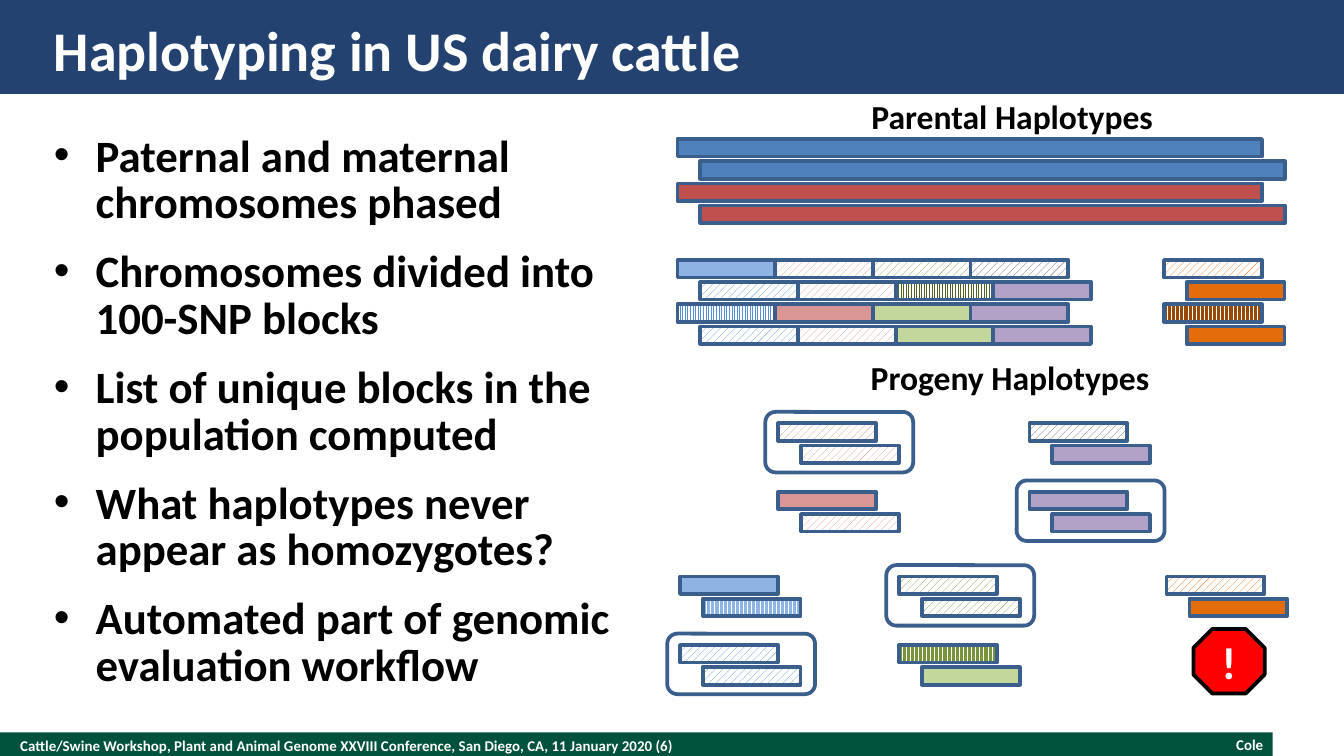
"""Build the slide on haplotyping in US dairy cattle."""
import lxml.etree
import pptx
import pptx.dml.color
import pptx.enum.dml
import pptx.enum.shapes
import pptx.enum.text
import pptx.oxml.ns
import pptx.util

THEME = {
    "font": "Calibri", "title": 30, "body": 24, "label": 18, "footer": 8,
    "line": 2, "white": "FFFFFF", "black": "000000",
    "header": "244270", "band": "00523C", "outline": "3A5F8C",
    "sire": "4F81BD", "dam": "C0504D", "alarm": "FF0000",
    "sky": "8EB4E3", "rose": "D99694", "lime": "C3D69B",
    "lilac": "B3A2C7", "orange": "E46C0A",
    "blue hatch": ("WIDE_UPWARD_DIAGONAL", "558ED5"),
    "rose hatch": ("WIDE_UPWARD_DIAGONAL", "D99694"),
    "green hatch": ("WIDE_UPWARD_DIAGONAL", "77933C"),
    "violet hatch": ("WIDE_UPWARD_DIAGONAL", "604A7B"),
    "orange hatch": ("WIDE_UPWARD_DIAGONAL", "E46C0A"),
    "blue stripe": ("LIGHT_VERTICAL", "558ED5"),
    "forest stripe": ("LIGHT_VERTICAL", "4F6228"),
    "sky stripe": ("DARK_VERTICAL", "8EB4E3"),
    "green stripe": ("DARK_VERTICAL", "77933C"),
    "brown stripe": ("DARK_VERTICAL", "984807"),
}
COLOR = pptx.dml.color.RGBColor.from_string
KIND = pptx.enum.shapes.MSO_SHAPE
ALIGN = pptx.enum.text.PP_ALIGN
MIDDLE = pptx.enum.text.MSO_ANCHOR.MIDDLE
FIT = pptx.enum.text.MSO_AUTO_SIZE

deck = pptx.Presentation()
deck.slide_width = pptx.util.Inches(10)
deck.slide_height = deck.slide_width * 9 // 16
page = deck.slides.add_slide(deck.slide_layouts[1])
CELL = deck.slide_width / 100


def add_box(parent, kind, cells, fill=None, line="outline"):
    """Draw a shape whose place is given in grid cells."""
    box = parent.shapes.add_shape(kind, *[round(cell * CELL) for cell in cells])
    box.shadow.inherit = False
    if fill is None:
        box.fill.background()
    elif isinstance(THEME[fill], tuple):
        pattern, ink = THEME[fill]
        box.fill.patterned()
        box.fill.pattern = getattr(pptx.enum.dml.MSO_PATTERN, pattern)
        box.fill.fore_color.rgb = COLOR(ink)
        box.fill.back_color.rgb = COLOR(THEME["white"])
    else:
        box.fill.solid()
        box.fill.fore_color.rgb = COLOR(THEME[fill])
    if line is None:
        box.line.fill.background()
    else:
        box.line.color.rgb = COLOR(THEME[line])
        box.line.width = pptx.util.Pt(THEME["line"])
    return box


def write(box, text, size, color, align=ALIGN.LEFT, flush=True):
    """Fill a box with text and format every run."""
    frame = box.text_frame
    frame.text = text
    if flush:
        frame.margin_left = frame.margin_right = 0
        frame.margin_top = frame.margin_bottom = 0
    for para in frame.paragraphs:
        para.alignment = align
        for span in para.runs:
            span.font.name = THEME["font"]
            span.font.size = pptx.util.Pt(THEME[size])
            span.font.bold = True
            span.font.color.rgb = COLOR(THEME[color])
    return frame


add_box(page, KIND.RECTANGLE, (0, 54.5, 94.7, 2), "band", None)
add_box(page, KIND.RECTANGLE, (0, 0, 100, 7), "header", None)

for text, cells, align in (
    ("Cattle/Swine Workshop, Plant and Animal Genome XXVIII Conference, "
     "San Diego, CA, 11 January 2020 (6)", (1.5, 54.5, 65, 2), ALIGN.LEFT),
    ("Cole", (72, 54.75, 22, 1.3), ALIGN.RIGHT),
):
    box = page.shapes.add_textbox(*[round(cell * CELL) for cell in cells])
    frame = write(box, text, "footer", "white", align)
    frame.word_wrap = True
    frame.vertical_anchor = MIDDLE

title, body = page.shapes.title, page.placeholders[1]
for holder, cells in ((title, (4, 1, 92, 5.25)), (body, (4, 10, 44, 42))):
    holder.left, holder.top, holder.width, holder.height = [
        round(cell * CELL) for cell in cells]
    holder.text_frame.auto_size = FIT.NONE
    holder.element.getparent().append(holder.element)
write(title, "Haplotyping in US dairy cattle", "title", "white").vertical_anchor = MIDDLE

points = (
    "Paternal and maternal chromosomes phased",
    "Chromosomes divided into 100-SNP blocks",
    "List of unique blocks in the population computed",
    "What haplotypes never appear as homozygotes?",
    "Automated part of genomic evaluation workflow",
)
indent = round(3.12 * CELL)
for para in write(body, "\n".join(points), "body", "black").paragraphs:
    properties = para._p.get_or_add_pPr()
    properties.set("marL", str(indent))
    properties.set("indent", str(-indent))
    bullet = lxml.etree.SubElement(properties, pptx.oxml.ns.qn("a:buChar"))
    bullet.set("char", "•")
    para.line_spacing = pptx.util.Pt(25)
    para.space_before = pptx.util.Pt(0)
    para.space_after = pptx.util.Pt(12)

LEFT, SHIFT, STEP = 50.4, 1.7, 1.65
BLOCK, THICK = 7.27, 1.3

parents = page.shapes.add_group_shape()
for row, fill in enumerate(("sire", "sire", "dam", "dam")):
    cells = (LEFT + row % 2 * SHIFT, 10.35 + row * STEP, 43.5, THICK)
    add_box(parents, KIND.RECTANGLE, cells, fill)

block_rows = (
    ("sky", "rose hatch", "green hatch", "violet hatch", "orange hatch"),
    ("blue hatch", "rose hatch", "forest stripe", "lilac", "orange"),
    ("blue stripe", "rose", "lime", "lilac", "brown stripe"),
    ("blue hatch", "rose hatch", "lime", "lilac", "orange"),
)
blocks = page.shapes.add_group_shape()
for row, fills in enumerate(block_rows):
    for offset, fill in zip((0, 1, 2, 3, 4.98), fills):
        cells = (LEFT + row % 2 * SHIFT + offset * BLOCK,
                 19.35 + row * STEP, BLOCK, THICK)
        add_box(blocks, KIND.RECTANGLE, cells, fill)

pairs = (
    (57.9, 31.5, "rose hatch", "rose hatch", True),
    (57.9, 36.6, "rose", "rose hatch", False),
    (76.6, 31.5, "violet hatch", "lilac", False),
    (76.6, 36.6, "lilac", "lilac", True),
    (50.6, 42.9, "sky", "sky stripe", False),
    (50.6, 48, "blue hatch", "blue hatch", True),
    (66.9, 42.9, "green hatch", "green hatch", True),
    (66.9, 48, "green stripe", "lime", False),
    (86.8, 42.9, "orange hatch", "orange", False),
)
progeny = page.shapes.add_group_shape()
for column, row, first, second, homozygous in pairs:
    for place, fill in enumerate((first, second)):
        cells = (column + place * SHIFT, row + place * STEP, BLOCK, THICK)
        add_box(progeny, KIND.RECTANGLE, cells, fill)
    if homozygous:
        add_box(progeny, KIND.ROUNDED_RECTANGLE, (column - 0.95, row - 0.85, 11, 4.5))

alarm = add_box(progeny, KIND.OCTAGON, (88.8, 46.8, 5.3, 4.8), "alarm", "black")
write(alarm, "!", "body", "white", ALIGN.CENTER, False).vertical_anchor = MIDDLE

for text, cells in (
    ("Parental Haplotypes", (63.85, 6.65, 23.1, 4)),
    ("Progeny Haplotypes", (63.8, 26.1, 22.9, 4)),
):
    box = page.shapes.add_textbox(*[round(cell * CELL) for cell in cells])
    frame = write(box, text, "label", "black", flush=False)
    frame.word_wrap = False
    frame.auto_size = FIT.SHAPE_TO_FIT_TEXT

deck.save("out.pptx")
